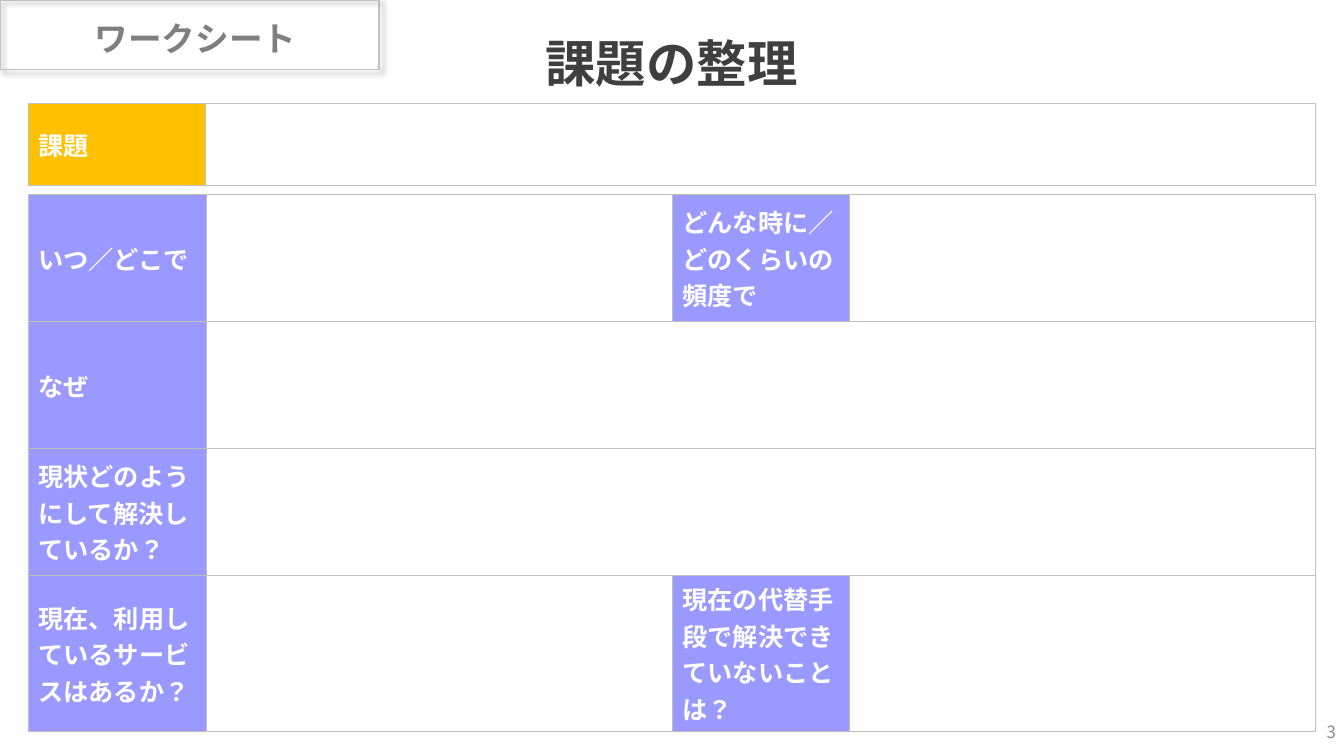
from dataclasses import dataclass

import lxml.etree
import pptx
import pptx.dml.color
import pptx.enum.lang
import pptx.enum.shapes
import pptx.enum.text
import pptx.oxml
import pptx.oxml.ns
import pptx.shapes.autoshape
import pptx.shapes.shapetree
import pptx.table
import pptx.text.text
import pptx.util

Inches = pptx.util.Inches
Pt = pptx.util.Pt
Align = pptx.enum.text.PP_ALIGN
Anchor = pptx.enum.text.MSO_ANCHOR
qualified = pptx.oxml.ns.qn
DRAWING_NAMESPACE = pptx.oxml.ns.nsdecls("a")


@dataclass(frozen=True)
class TextStyle:
    size: float
    color: str
    bold: bool = True
    font: str = "Noto Sans CJK JP"
    spacing: float = 0


@dataclass(frozen=True)
class Theme:
    border: str = "BFBFBF"
    white: str = "FFFFFF"
    issue_fill: str = "FFC000"
    question_fill: str = "9999FF"
    title: TextStyle = TextStyle(36, "3F3F3F")
    badge: TextStyle = TextStyle(24, "7F7F7F")
    label: TextStyle = TextStyle(18, "FFFFFF")
    page_number: TextStyle = TextStyle(12, "898989", False, "Noto Sans CJK SC", 1.9)


@dataclass(frozen=True)
class Box:
    left: float
    top: float
    width: float
    height: float

    def lengths(self) -> tuple:
        return tuple(Inches(v) for v in (self.left, self.top, self.width, self.height))


@dataclass(frozen=True)
class Label:
    row: int
    column: int
    lines: tuple[str, ...]


@dataclass(frozen=True)
class Grid:
    left: float
    top: float
    columns: tuple[float, ...]
    rows: tuple[float, ...]
    label_fill: str
    labels: tuple[Label, ...]
    wide_rows: tuple[int, ...] = ()

    def box(self) -> Box:
        return Box(self.left, self.top, sum(self.columns), sum(self.rows))


THEME = Theme()

ISSUE_GRID = Grid(
    0.28, 1.03, (1.76, 11.01), (0.81,), THEME.issue_fill,
    (Label(0, 0, ("課題",)),),
)
# The last row is taller, to hold a label of four lines
QUESTION_GRID = Grid(
    0.28, 1.93, (1.77, 4.62, 1.76, 4.62), (1.26, 1.26, 1.26, 1.55), THEME.question_fill,
    (
        Label(0, 0, ("いつ／どこで",)),
        Label(0, 2, ("どんな時に／", "どのくらいの頻度で")),
        Label(1, 0, ("なぜ",)),
        Label(2, 0, ("現状どのようにして解決しているか？",)),
        Label(3, 0, ("現在、利用しているサービスはあるか？",)),
        Label(3, 2, ("現在の代替手段で解決できていないことは？",)),
    ),
    wide_rows=(1, 2),
)


def rgb(color: str) -> pptx.dml.color.RGBColor:
    return pptx.dml.color.RGBColor.from_string(color)


def add_run(paragraph: pptx.text.text._Paragraph, text: str, style: TextStyle) -> None:
    run = paragraph.add_run()
    run.text = text
    run.font.size = Pt(style.size)
    run.font.bold = style.bold
    run.font.color.rgb = rgb(style.color)
    run.font.name = style.font
    run.font.language_id = pptx.enum.lang.MSO_LANGUAGE_ID.JAPANESE
    properties = run.font._element
    east_asian = lxml.etree.SubElement(properties, qualified("a:ea"))
    east_asian.set("typeface", style.font)
    if style.spacing:
        properties.set("spc", str(round(style.spacing * 100)))


def add_text(shapes: pptx.shapes.shapetree._BaseGroupShapes, box: Box, text: str,
             style: TextStyle, align: Align, anchor: Anchor,
             margins: tuple[float, float] = (0, 0)) -> pptx.text.text._Paragraph:
    frame = shapes.add_textbox(*box.lengths()).text_frame
    frame.word_wrap = True
    frame.vertical_anchor = anchor
    frame.margin_left = frame.margin_right = Inches(margins[0])
    frame.margin_top = frame.margin_bottom = Inches(margins[1])
    paragraph = frame.paragraphs[0]
    paragraph.alignment = align
    add_run(paragraph, text, style)
    return paragraph


def add_borders(cell: pptx.table._Cell) -> None:
    properties = cell._tc.get_or_add_tcPr()
    for position, side in enumerate(("lnL", "lnR", "lnT", "lnB")):
        properties.insert(position, pptx.oxml.parse_xml(
            f'<a:{side} {DRAWING_NAMESPACE} w="{Pt(1)}"><a:solidFill>'
            f'<a:srgbClr val="{THEME.border}"/></a:solidFill></a:{side}>'))


def add_grid(shapes: pptx.shapes.shapetree.SlideShapes, grid: Grid) -> None:
    frame = shapes.add_table(len(grid.rows), len(grid.columns), *grid.box().lengths())
    table = frame.table
    table.first_row = table.horz_banding = False
    for column, width in zip(table.columns, grid.columns):
        column.width = Inches(width)
    for row, height in zip(table.rows, grid.rows):
        row.height = Inches(height)
    for cell in table.iter_cells():
        cell.fill.solid()
        cell.fill.fore_color.rgb = rgb(THEME.white)
        add_borders(cell)
    for row_index in grid.wide_rows:
        table.cell(row_index, 1).merge(table.cell(row_index, len(grid.columns) - 1))
    for label in grid.labels:
        cell = table.cell(label.row, label.column)
        cell.fill.fore_color.rgb = rgb(grid.label_fill)
        cell.vertical_anchor = Anchor.MIDDLE
        for index, line in enumerate(label.lines):
            text_frame = cell.text_frame
            paragraph = text_frame.add_paragraph() if index else text_frame.paragraphs[0]
            add_run(paragraph, line, THEME.label)


def add_shadow(shape: pptx.shapes.autoshape.Shape) -> None:
    shape.shadow.inherit = False
    effects = shape._element.spPr.find(qualified("a:effectLst"))
    effects.append(pptx.oxml.parse_xml(
        f'<a:outerShdw {DRAWING_NAMESPACE} blurRad="{Pt(4)}" dist="{Pt(3)}" '
        'dir="2700000" algn="tl" rotWithShape="0"><a:srgbClr val="000000">'
        '<a:alpha val="40000"/></a:srgbClr></a:outerShdw>'))


def add_badge(shapes: pptx.shapes.shapetree.SlideShapes) -> None:
    badge = shapes.add_group_shape().shapes
    frame = badge.add_shape(pptx.enum.shapes.MSO_SHAPE.RECTANGLE,
                            *Box(0, 0, 3.76, 0.69).lengths())
    frame.fill.background()
    frame.line.color.rgb = rgb(THEME.border)
    frame.line.width = Pt(1)
    add_shadow(frame)
    add_text(badge, Box(0.12, 0.13, 3.64, 0.5), "ワークシート", THEME.badge,
             Align.CENTER, Anchor.TOP, (0.1, 0.05))


def main() -> None:
    presentation = pptx.Presentation()
    presentation.slide_width = Inches(13.33)
    presentation.slide_height = Inches(7.5)
    shapes = presentation.slides.add_slide(presentation.slide_layouts[6]).shapes

    # Page number and title
    add_text(shapes, Box(10.25, 7.06, 3, 0.4), "3", THEME.page_number,
             Align.RIGHT, Anchor.MIDDLE)
    title = add_text(shapes, Box(0.56, 0.24, 12.2, 0.69), "課題の整理", THEME.title,
                     Align.CENTER, Anchor.BOTTOM)
    title.line_spacing = 0.9

    # Worksheet tables
    add_grid(shapes, QUESTION_GRID)
    add_grid(shapes, ISSUE_GRID)

    # Corner badge
    add_badge(shapes)

    presentation.save("out.pptx")


if __name__ == "__main__":
    main()
